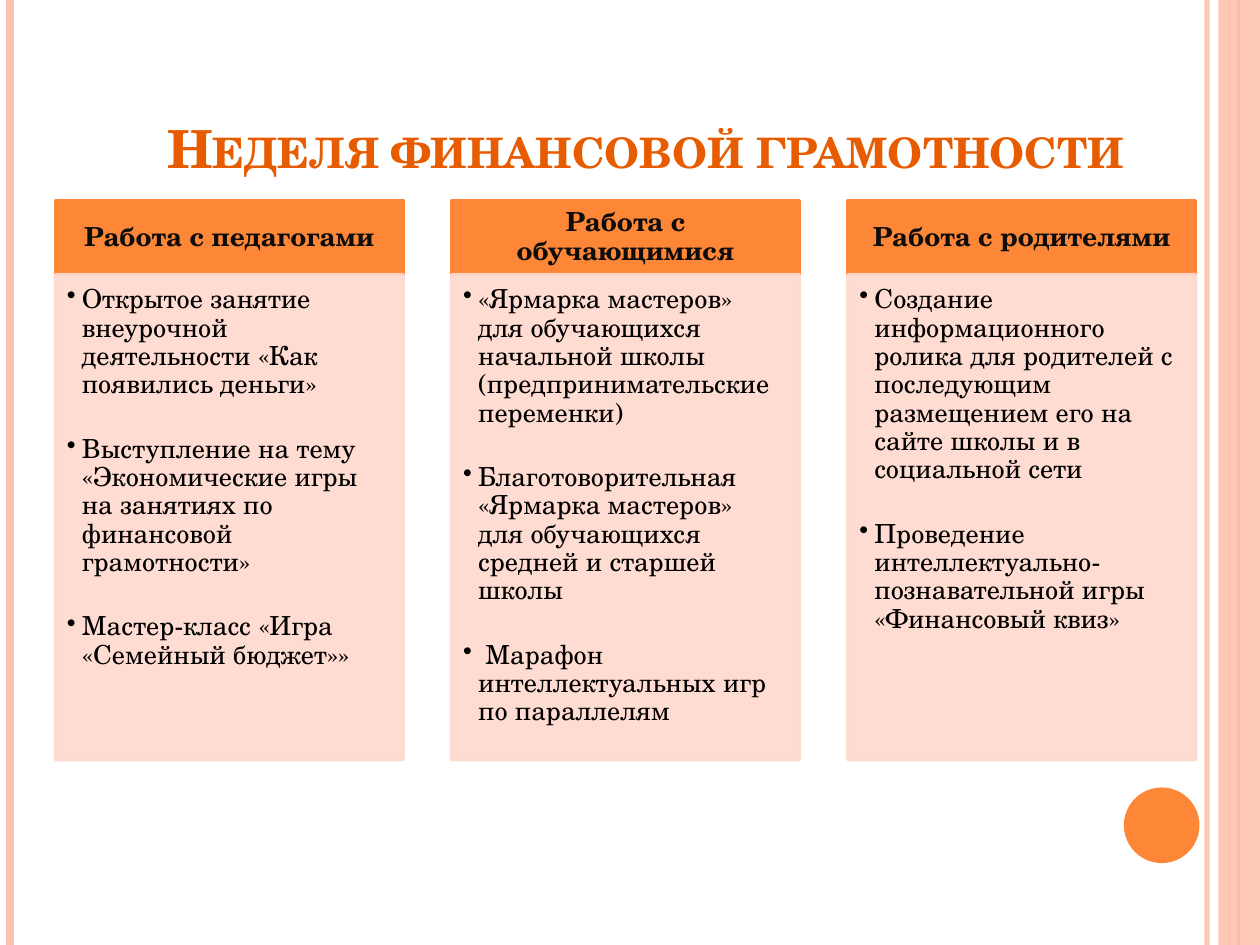
from dataclasses import dataclass

from lxml.etree import SubElement
from pptx import Presentation
from pptx.dml.color import RGBColor
from pptx.enum.shapes import MSO_CONNECTOR, MSO_SHAPE
from pptx.enum.text import MSO_ANCHOR as Anchor, MSO_AUTO_SIZE, PP_ALIGN as Align
from pptx.oxml.ns import qn
from pptx.util import Inches, Pt


@dataclass(frozen=True)
class Theme:
    font: str = "TeX Gyre Schola"
    accent: str = "FE8637"
    stripe: str = "FEC3AE"
    panel: str = "FFD9CE"
    title: str = "E75C01"
    heading: str = "0D0D0D"
    body: str = "000000"
    title_size: float = 30
    text_size: float = 15


THEME = Theme()
SLIDE_W, SLIDE_H = 10, 7.5

# Column grid: equal steps between the two outer edges
GRID_LEFT, GRID_RIGHT, COLUMN_W = 0.44, 9.49, 2.76
HEADING_TOP, HEADING_H, PANEL_H = 1.59, 0.59, 3.85

COLUMNS = [
    ("Работа с педагогами", [
        "Открытое занятие внеурочной деятельности «Как появились деньги»",
        "Выступление на тему «Экономические игры на занятиях по финансовой грамотности»",
        "Мастер-класс «Игра «Семейный бюджет»»",
    ]),
    ("Работа с обучающимися", [
        "«Ярмарка мастеров» для обучающихся начальной школы "
        "(предпринимательские переменки)",
        "Благотоворительная «Ярмарка мастеров» для обучающихся средней и старшей школы",
        " Марафон интеллектуальных игр по параллелям",
    ]),
    ("Работа с родителями", [
        "Создание информационного ролика для родителей с последующим "
        "размещением его на сайте школы и в социальной сети",
        "Проведение интеллектуально-познавательной игры «Финансовый квиз»",
    ]),
]

# Vertical stripes: x, colour, width in points, opacity in percent
STRIPES = [
    (9.58, THEME.stripe, 3, 93),
    (0.08, THEME.stripe, 4.5, 100),
    (9.83, THEME.accent, 1.5, 100),
    (9.75, THEME.accent, 0.75, 100),
]


def set_opacity(element, percent):
    if percent < 100:
        for color in element.iter(qn("a:srgbClr")):
            SubElement(color, qn("a:alpha"), val=str(percent * 1000))


def add_stripe(slide, x, color, width, opacity):
    stripe = slide.shapes.add_connector(
        MSO_CONNECTOR.STRAIGHT, Inches(x), 0, Inches(x), Inches(SLIDE_H))
    stripe.line.color.rgb = RGBColor.from_string(color)
    stripe.line.width = Pt(width)
    properties = stripe.element.spPr
    set_opacity(properties, opacity)
    SubElement(properties, qn("a:effectLst"))


def add_block(slide, preset, box, color, opacity=100, outline=None):
    block = slide.shapes.add_shape(preset, *map(Inches, box))
    block.shadow.inherit = False
    block.fill.solid()
    block.fill.fore_color.rgb = RGBColor.from_string(color)
    if outline:
        block.line.color.rgb = RGBColor.from_string(color)
        block.line.width = Pt(outline)
    else:
        block.line.fill.background()
    set_opacity(block.element.spPr, opacity)
    return block


def add_bullet(paragraph, indent):
    properties = paragraph._p.get_or_add_pPr()
    properties.set("marL", str(Inches(indent)))
    properties.set("indent", str(-Inches(indent)))
    SubElement(properties, qn("a:buChar"), char="•")


def write_text(shape, lines, *, size, color, bold=False, align=Align.LEFT,
               anchor=Anchor.MIDDLE, insets=(0.1, 0.05, 0.1, 0.05),
               line_spacing=1.0, gap=0, bullet_indent=None, small_caps=False):
    frame = shape.text_frame
    frame.word_wrap = True
    frame.auto_size = MSO_AUTO_SIZE.NONE
    frame.vertical_anchor = anchor
    (frame.margin_left, frame.margin_top,
     frame.margin_right, frame.margin_bottom) = map(Inches, insets)
    for index, line in enumerate(lines):
        paragraph = frame.add_paragraph() if index else frame.paragraphs[0]
        paragraph.alignment = align
        paragraph.line_spacing = line_spacing
        paragraph.space_after = Pt(gap)
        if bullet_indent:
            add_bullet(paragraph, bullet_indent)
        run = paragraph.add_run()
        run.text = line
        run.font.name = THEME.font
        run.font.size = Pt(size)
        run.font.bold = bold
        run.font.color.rgb = RGBColor.from_string(color)
        if small_caps:
            run.font._element.set("cap", "small")


def add_decoration(slide):
    for stripe in STRIPES:
        add_stripe(slide, *stripe)
    add_block(slide, MSO_SHAPE.RECTANGLE, (9.67, 0, 0.33, SLIDE_H),
              THEME.stripe, opacity=87)
    add_block(slide, MSO_SHAPE.OVAL, (8.92, 6.25, 0.6, 0.6), THEME.accent)


def add_title(slide, text):
    title = slide.shapes.title
    title.left, title.top, title.width, title.height = map(
        Inches, (1.15, 0.85, 7.95, 0.64))
    write_text(title, [text], size=THEME.title_size, color=THEME.title,
               bold=True, align=Align.CENTER, small_caps=True)


def add_column(slide, left, heading_text, activities):
    heading = add_block(slide, MSO_SHAPE.RECTANGLE,
                        (left, HEADING_TOP, COLUMN_W, HEADING_H),
                        THEME.accent, outline=2)
    write_text(heading, [heading_text], size=THEME.text_size,
               color=THEME.heading, bold=True, align=Align.CENTER,
               insets=(0.12, 0.07, 0.12, 0.07), line_spacing=0.9)
    panel = add_block(slide, MSO_SHAPE.RECTANGLE,
                      (left, HEADING_TOP + HEADING_H, COLUMN_W, PANEL_H),
                      THEME.panel, opacity=90, outline=2)
    write_text(panel, activities, size=THEME.text_size, color=THEME.body,
               anchor=Anchor.TOP, insets=(0.09, 0.09, 0.12, 0.13),
               line_spacing=0.9, gap=20.5, bullet_indent=0.12)


def main():
    presentation = Presentation()
    presentation.slide_width = Inches(SLIDE_W)
    presentation.slide_height = Inches(SLIDE_H)
    slide = presentation.slides.add_slide(presentation.slide_layouts[5])

    # Side stripes and the round accent
    add_decoration(slide)

    # Title
    add_title(slide, "Неделя финансовой грамотности")

    # Three columns of activities
    step = (GRID_RIGHT - GRID_LEFT - COLUMN_W) / (len(COLUMNS) - 1)
    for index, (heading, activities) in enumerate(COLUMNS):
        add_column(slide, GRID_LEFT + index * step, heading, activities)

    presentation.save("out.pptx")


if __name__ == "__main__":
    main()
